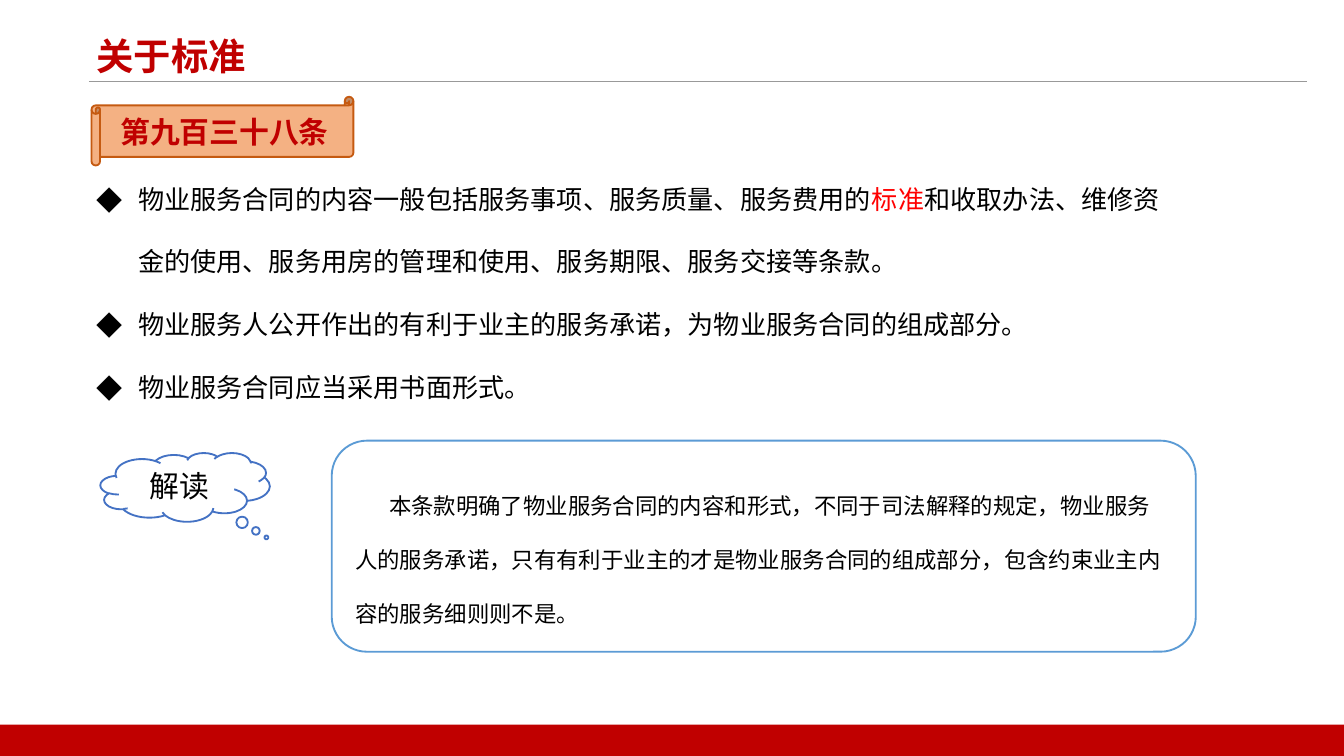
from dataclasses import dataclass

from lxml.etree import SubElement
from pptx import Presentation
from pptx.dml.color import RGBColor
from pptx.enum.shapes import MSO_CONNECTOR as Connector, MSO_SHAPE as Shape
from pptx.enum.text import MSO_ANCHOR as Anchor, PP_ALIGN as Align
from pptx.oxml.ns import qn
from pptx.util import Cm, Pt


@dataclass(frozen=True)
class Theme:
    font: str = "Noto Sans CJK SC"
    red: str = "C00000"
    highlight: str = "FF0000"
    ink: str = "000000"
    paper: str = "FFFFFF"
    rule: str = "999999"
    scroll_fill: str = "F4B183"
    scroll_line: str = "C55A11"
    cloud_line: str = "4472C4"
    note_line: str = "5B9BD5"
    title_size: int = 20
    label_size: int = 16
    body_size: int = 14
    note_size: int = 12


class SlideBuilder:
    def __init__(self, slide, theme):
        self.slide = slide
        self.theme = theme

    def background(self, color):
        fill = self.slide.background.fill
        fill.solid()
        fill.fore_color.rgb = RGBColor.from_string(color)

    def rule(self, left, top, right):
        line = self.slide.shapes.add_connector(
            Connector.STRAIGHT, Cm(left), Cm(top), Cm(right), Cm(top))
        line.line.color.rgb = RGBColor.from_string(self.theme.rule)
        line.line.width = Pt(0.5)
        SubElement(line._element.spPr, qn("a:effectLst"))

    def shape(self, kind, frame, fill=None, outline=None):
        shape = self.slide.shapes.add_shape(kind, *map(Cm, frame))
        shape.shadow.inherit = False
        if fill:
            shape.fill.solid()
            shape.fill.fore_color.rgb = RGBColor.from_string(fill)
        else:
            shape.fill.background()
        if outline:
            shape.line.color.rgb = RGBColor.from_string(outline)
            shape.line.width = Pt(1)
        else:
            shape.line.fill.background()
        shape.text_frame.vertical_anchor = Anchor.MIDDLE
        return shape

    def text_box(self, frame):
        box = self.slide.shapes.add_textbox(*map(Cm, frame))
        box.text_frame.word_wrap = True
        return box

    def text(self, box, paragraphs, size, color=None, bold=False,
             align=Align.LEFT, spacing=None, margin=0, indent=0, bullet=None):
        frame = box.text_frame
        for index, pieces in enumerate(paragraphs):
            para = frame.paragraphs[0] if index == 0 else frame.add_paragraph()
            para.alignment = align
            if spacing:
                para.line_spacing = spacing
            properties = para._p.get_or_add_pPr()
            properties.set("marL", str(Cm(margin)))
            properties.set("indent", str(Cm(indent)))
            if bullet:
                SubElement(properties, qn("a:buFont"), typeface=self.theme.font)
                SubElement(properties, qn("a:buChar"), char=bullet)
            font = para.font
            font.size = Pt(size)
            font.bold = bold
            font.color.rgb = RGBColor.from_string(color or self.theme.ink)
            font.name = self.theme.font
            SubElement(properties.find(qn("a:defRPr")), qn("a:ea"),
                       typeface=self.theme.font)
            for words, run_color in pieces:
                span = para.add_run()
                span.text = words
                span.font.color.rgb = RGBColor.from_string(
                    run_color or color or self.theme.ink)


def main():
    theme = Theme()
    deck = Presentation()
    deck.slide_width, deck.slide_height = Cm(25.4), Cm(14.29)
    page = SlideBuilder(deck.slides.add_slide(deck.slide_layouts[6]), theme)

    page.background(theme.paper)
    page.rule(1.68, 1.54, 24.71)
    page.shape(Shape.RECTANGLE, (0, 13.7, 25.4, 0.59), theme.red)

    article = page.shape(Shape.HORIZONTAL_SCROLL, (1.73, 1.83, 4.95, 1.3),
                         theme.scroll_fill, theme.scroll_line)
    page.text(article, [[("第九百三十八条", None)]], theme.label_size,
              theme.red, bold=True, align=Align.CENTER)

    clauses = page.text_box((1.57, 2.74, 21.03, 4.83))
    page.text(clauses, [
        [("物业服务合同的内容一般包括服务事项、服务质量、服务费用的", None),
         ("标准", theme.highlight),
         ("和收取办法、维修资金的使用、服务用房的管理和使用、服务期限、服务交接等条款。", None)],
        [("物业服务人公开作出的有利于业主的服务承诺，为物业服务合同的组成部分。", None)],
        [("物业服务合同应当采用书面形式。", None)],
    ], theme.body_size, spacing=2.0, margin=0.79, indent=-0.79, bullet="◆")

    title = page.text_box((1.57, 0.51, 4.67, 1.3))
    page.text(title, [[("关于标准", None)]], theme.title_size, theme.red, bold=True)

    cloud = page.shape(Shape.CLOUD_CALLOUT, (1.9, 8.56, 3.2, 1.3),
                       theme.paper, theme.cloud_line)
    cloud.adjustments[0], cloud.adjustments[1] = 0.48, 0.73
    page.text(cloud, [[("解读", None)]], theme.label_size, align=Align.CENTER)

    note = page.shape(Shape.ROUNDED_RECTANGLE, (6.27, 8.33, 16.33, 3.99),
                      outline=theme.note_line)
    page.text(note, [[(
        "本条款明确了物业服务合同的内容和形式，不同于司法解释的规定，物业服务人的服务承诺，"
        "只有有利于业主的才是物业服务合同的组成部分，包含约束业主内容的服务细则则不是。", None)]],
        theme.note_size, spacing=2.0, indent=0.64)

    deck.save("out.pptx")


if __name__ == "__main__":
    main()
